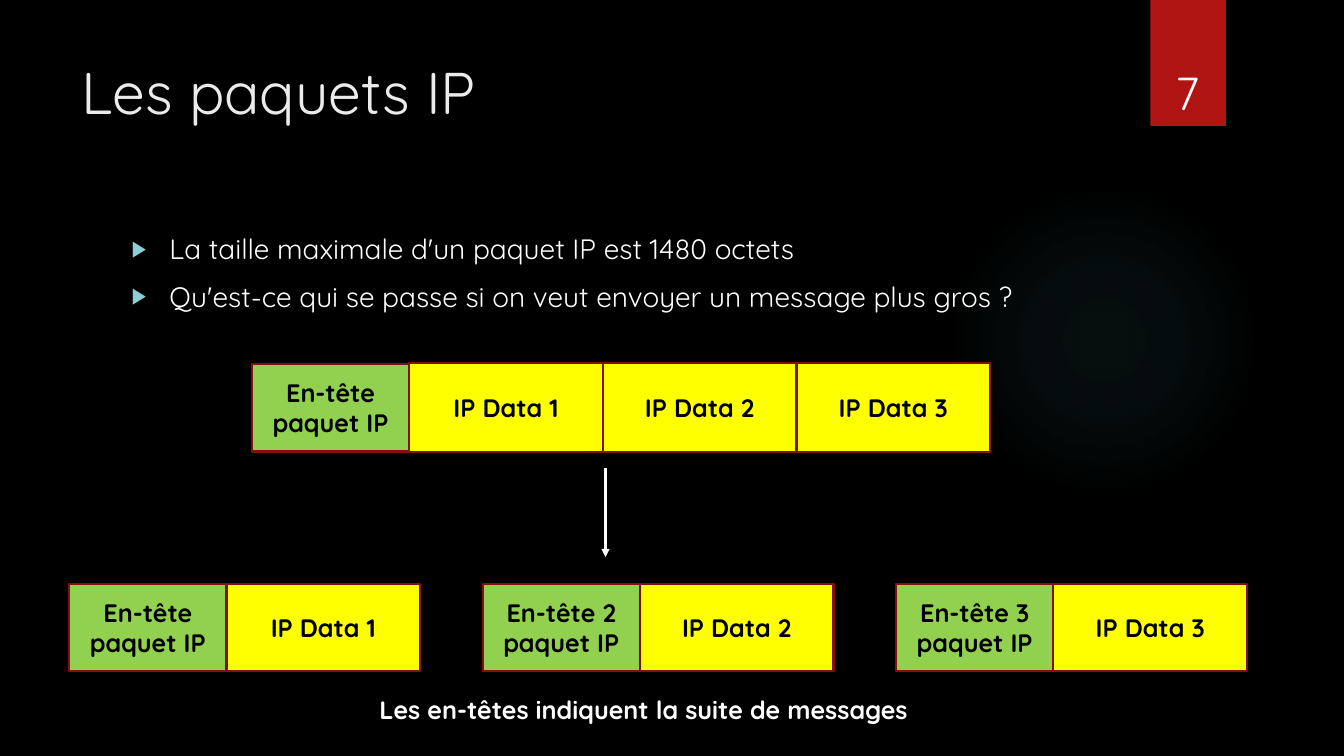
from dataclasses import dataclass

from lxml import etree
from pptx import Presentation
from pptx.dml.color import RGBColor
from pptx.enum import shapes, text
from pptx.oxml.ns import qn
from pptx.util import Pt

BLACK = RGBColor(0x00, 0x00, 0x00)
WHITE = RGBColor(0xFF, 0xFF, 0xFF)
PALE = RGBColor(0xEB, 0xEB, 0xEB)
RED = RGBColor(0xB0, 0x15, 0x13)
MAROON = RGBColor(0x82, 0x10, 0x0E)
YELLOW = RGBColor(0xFF, 0xFF, 0x00)
GREEN = RGBColor(0x92, 0xD0, 0x50)
TEAL = RGBColor(0x50, 0xB9, 0xC1)
AQUA = RGBColor(0x8A, 0xD0, 0xD6)
FONT = "Quicksand"
HEAD_W, DATA_W, CELL_H = 112.3, 138.3, 62.64


@dataclass
class Box:
    left: float
    top: float
    width: float
    height: float

    def lengths(self) -> tuple:
        return Pt(self.left), Pt(self.top), Pt(self.width), Pt(self.height)


@dataclass
class Style:
    size: float
    color: RGBColor
    bold: bool = False


@dataclass
class Cell:
    box: Box
    label: str
    fill: RGBColor


@dataclass
class Packet:
    left: float
    head: str
    data: str


LABEL = Style(18, BLACK, True)


def add_node(parent, tag: str, **attrs):
    return etree.SubElement(parent, qn(tag), attrs)


def write(frame, words: str, style: Style) -> None:
    frame.text = words
    for para in frame.paragraphs:
        for run in para.runs:
            font = run.font
            font.name, font.size, font.bold = FONT, Pt(style.size), style.bold
            font.color.rgb = style.color


def add_text(slide, box: Box, words: str, style: Style):
    frame = slide.shapes.add_textbox(*box.lengths()).text_frame
    frame.word_wrap = True
    write(frame, words, style)
    return frame


def add_form(slide, kind, box: Box):
    form = slide.shapes.add_shape(kind, *box.lengths())
    form.shadow.inherit = False
    form.line.fill.background()
    return form


def add_glow(slide) -> None:
    glow = add_form(slide, shapes.MSO_SHAPE.OVAL, Box(677.5, 131.8, 221.8, 221.8))
    props = glow._element.spPr
    grad = etree.Element(qn("a:gradFill"), rotWithShape="1")
    stops = add_node(grad, "a:gsLst")
    for place, alpha in ((0, 7), (36, 6), (69, 0)):
        stop = add_node(stops, "a:gs", pos=str(place * 1000))
        tint = add_node(stop, "a:srgbClr", val=str(TEAL))
        add_node(tint, "a:alpha", val=str(alpha * 1000))
    round_fill = add_node(grad, "a:path", path="circle")
    add_node(round_fill, "a:fillToRect", l="50000", t="50000", r="50000", b="50000")
    props.find(qn("a:prstGeom")).addnext(grad)


def add_ribbon(slide) -> None:
    ribbon = add_form(slide, shapes.MSO_SHAPE.RECTANGLE, Box(821.7, 0, 54, 90))
    ribbon.fill.solid()
    ribbon.fill.fore_color.rgb = RED


def set_title(slide, words: str) -> None:
    title = slide.shapes.title
    title.left, title.top, title.width, title.height = Box(51, 36, 741, 110).lengths()
    frame = title.text_frame
    write(frame, words, Style(42, PALE))
    frame.auto_size = text.MSO_AUTO_SIZE.NONE
    frame.vertical_anchor = text.MSO_ANCHOR.TOP
    frame.paragraphs[0].alignment = text.PP_ALIGN.LEFT


def add_list(slide, lines: list[str]) -> None:
    frame = add_text(slide, Box(87, 162, 704, 330), "\n".join(lines), Style(20, WHITE))
    indent = Pt(27)
    for rank, para in enumerate(frame.paragraphs):
        if rank:
            para.space_before = Pt(10)
        props = para._p.get_or_add_pPr()
        props.set("marL", str(indent))
        props.set("indent", str(-indent))
        add_node(add_node(props, "a:buClr"), "a:srgbClr", val=str(AQUA))
        add_node(props, "a:buSzPct", val="80000")
        add_node(props, "a:buFont", typeface="Arial")
        add_node(props, "a:buChar", char="▶")


def add_cell(slide, cell: Cell) -> None:
    form = add_form(slide, shapes.MSO_SHAPE.RECTANGLE, cell.box)
    form.fill.solid()
    form.fill.fore_color.rgb = cell.fill
    form.line.color.rgb = MAROON
    form.line.width = Pt(1.5)
    frame = form.text_frame
    frame.word_wrap = True
    frame.vertical_anchor = text.MSO_ANCHOR.MIDDLE
    write(frame, cell.label, LABEL)
    for para in frame.paragraphs:
        para.alignment = text.PP_ALIGN.CENTER


def add_arrow(slide, x: float, top: float, end: float) -> None:
    arrow = slide.shapes.add_connector(
        shapes.MSO_CONNECTOR.STRAIGHT, Pt(x), Pt(top), Pt(x), Pt(end))
    arrow.line.color.rgb = WHITE
    arrow.line.width = Pt(1.75)
    add_node(arrow.line._get_or_add_ln(), "a:tailEnd", type="triangle")
    add_node(arrow._element.spPr, "a:effectLst")


def list_cells() -> list[Cell]:
    left, top = 180, 259.2
    names = [f"IP Data {n}" for n in (1, 2, 3)]
    heads = ["En-tête", "En-tête 2", "En-tête 3"]
    cells = [Cell(Box(left + HEAD_W + n * DATA_W, top, DATA_W, 64), name, YELLOW)
             for n, name in enumerate(names)]
    cells.append(Cell(Box(left, top + 0.7, HEAD_W, CELL_H), "En-tête\npaquet IP", GREEN))
    packets = [Packet(49.5 + n * 295.3, f"{head}\npaquet IP", name)
               for n, (head, name) in enumerate(zip(heads, names))]
    for packet in packets:
        cells += [
            Cell(Box(packet.left + HEAD_W, 417, DATA_W, CELL_H), packet.data, YELLOW),
            Cell(Box(packet.left, 417, HEAD_W, CELL_H), packet.head, GREEN),
        ]
    return cells


def main() -> None:
    deck = Presentation()
    deck.slide_width, deck.slide_height = Pt(960), Pt(540)
    slide = deck.slides.add_slide(deck.slide_layouts.get_by_name("Title Only"))
    slide.background.fill.solid()
    slide.background.fill.fore_color.rgb = BLACK
    add_glow(slide)
    add_ribbon(slide)
    set_title(slide, "Les paquets IP")
    add_list(slide, [
        "La taille maximale d'un paquet IP est 1480 octets",
        "Qu'est-ce qui se passe si on veut envoyer un message plus gros ?",
    ])
    for cell in list_cells():
        add_cell(slide, cell)
    add_arrow(slide, 432.5, 334.5, 398)
    add_text(slide, Box(264, 492.5, 581, 29),
             "Les en-têtes indiquent la suite de messages", Style(18, WHITE, True))
    add_text(slide, Box(832.5, 42.5, 56, 47.5), "7", Style(33, WHITE))
    deck.save("out.pptx")


if __name__ == "__main__":
    main()
